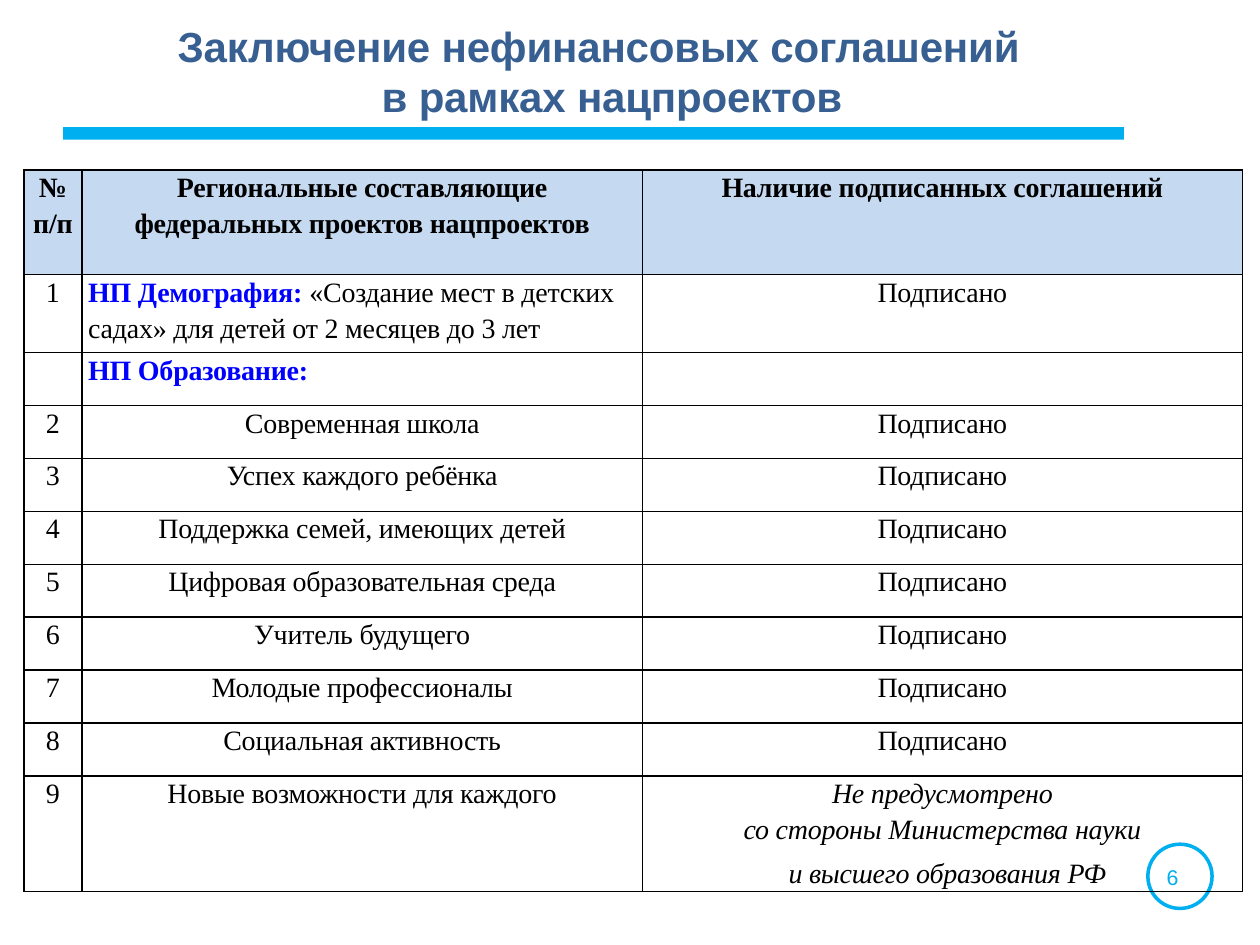
"""Build the slide on signed non-financial agreements of the national projects."""
from lxml import etree
from pptx import Presentation
from pptx.dml.color import RGBColor
from pptx.enum.shapes import MSO_SHAPE as Shape
from pptx.enum.text import PP_ALIGN as Align
from pptx.oxml.ns import qn
from pptx.util import Inches, Pt

COLORS = {"accent": "00AFEF", "title": "375F92", "header": "C5D9F0",
          "project": "0000FF", "text": "000000"}
SERIF, SANS = "Times New Roman", "Arial"
SIGNED = "Подписано"

TITLE = ["Заключение нефинансовых соглашений ", "в рамках нацпроектов"]
HEADERS = [
    [["№"], ["п/п"]],
    [["Региональные составляющие"], ["федеральных проектов нацпроектов"]],
    [["Наличие подписанных соглашений"]],
]
PROJECT = {"color": "project", "bold": True}
DEMOGRAPHY = [
    [("НП Демография: ", PROJECT), "«Создание мест в детских"],
    ["садах» для детей от 2 месяцев до 3 лет"],
]
EDUCATION = [[("НП Образование:", PROJECT)]]
EDUCATION_PROJECTS = [
    "Современная школа", "Успех каждого ребёнка", "Поддержка семей, имеющих детей",
    "Цифровая образовательная среда", "Учитель будущего",
    "Молодые профессионалы", "Социальная активность",
]
LAST_PROJECT = "Новые возможности для каждого"
PAGE_NUMBER = ("6", {"size": 21, "font": SANS, "color": "accent",
                     "italic": False, "spacing": 0, "baseline": -6})
NOT_PLANNED = [["Не предусмотрено"], ["со стороны Министерства науки"]]
NOT_PLANNED_END = ["и высшего образования РФ\t", PAGE_NUMBER]

COLUMN_WIDTHS = [0.46, 4.45, 4.76]
ROW_HEIGHTS = [0.83, 0.62] + [0.42] * 8 + [0.92]


def rgb(name):
    return RGBColor.from_string(COLORS[name])


def write(frame, paragraphs, *, align=Align.CENTER, left=0, hanging=0, tab=None,
          gap=2.9, new=True, **defaults):
    """Write paragraphs, each a list of strings or (string, format) pairs."""
    frame.word_wrap = True
    for index, runs in enumerate(paragraphs):
        first = new and index == 0
        paragraph = frame.paragraphs[0] if first else frame.add_paragraph()
        properties = paragraph._p.get_or_add_pPr()
        properties.set("marL", str(Inches(left)))
        properties.set("indent", str(Inches(-hanging)))
        if tab:
            stops = etree.SubElement(properties, qn("a:tabLst"))
            etree.SubElement(stops, qn("a:tab"), pos=str(Inches(tab)), algn="l")
        paragraph.alignment = align
        if not first:
            paragraph.space_before = Pt(gap)
        for piece in runs:
            words, changes = (piece, {}) if isinstance(piece, str) else piece
            look = {"size": 16, "font": SERIF, "color": "text", "bold": False,
                    "italic": False, "spacing": -0.1, "baseline": 0,
                    **defaults, **changes}
            run = paragraph.add_run()
            run.text = words
            run.font.size, run.font.name = Pt(look["size"]), look["font"]
            run.font.bold, run.font.italic = look["bold"], look["italic"]
            run.font.color.rgb = rgb(look["color"])
            run_properties = run._r.get_or_add_rPr()
            run_properties.set("spc", str(round(look["spacing"] * 100)))
            if look["baseline"]:
                run_properties.set("baseline", str(look["baseline"] * 1000))


def add_decoration(slide, kind, *place, fill=None, line=None):
    shape = slide.shapes.add_shape(kind, *map(Inches, place))
    shape.shadow.inherit = False
    if fill:
        shape.fill.solid()
        shape.fill.fore_color.rgb = rgb(fill)
    else:
        shape.fill.background()
    if line:
        shape.line.color.rgb = rgb(line)
        shape.line.width = Pt(2)
    else:
        shape.line.fill.background()


def style_cell(cell, fill=None):
    cell.margin_left = cell.margin_right = cell.margin_bottom = 0
    cell.margin_top = Inches(0.02)
    properties = cell._tc.get_or_add_tcPr()
    for side in ("lnL", "lnR", "lnT", "lnB"):
        border = etree.SubElement(properties, qn(f"a:{side}"), w=str(Pt(1)))
        solid = etree.SubElement(border, qn("a:solidFill"))
        etree.SubElement(solid, qn("a:srgbClr"), val=COLORS["text"])
    if fill:
        cell.fill.solid()
        cell.fill.fore_color.rgb = rgb(fill)
    else:
        cell.fill.background()


def add_agreements(slide):
    table = slide.shapes.add_table(
        len(ROW_HEIGHTS), len(COLUMN_WIDTHS), Inches(0.19), Inches(1.35),
        Inches(sum(COLUMN_WIDTHS)), Inches(sum(ROW_HEIGHTS))).table
    table.first_row = table.horz_banding = False
    for column, width in zip(table.columns, COLUMN_WIDTHS):
        column.width = Inches(width)
    for row, height in zip(table.rows, ROW_HEIGHTS):
        row.height = Inches(height)

    signed = [[SIGNED]]
    body = [([["1"]], DEMOGRAPHY, signed), ([], EDUCATION, [])]
    body += [([[str(number)]], [[project]], signed)
             for number, project in enumerate(EDUCATION_PROJECTS, 2)]
    body.append(([["9"]], [[LAST_PROJECT]], []))

    for row, contents in enumerate([HEADERS, *body]):
        for column, paragraphs in enumerate(contents):
            cell = table.cell(row, column)
            style_cell(cell, None if row else "header")
            described = paragraphs in (DEMOGRAPHY, EDUCATION)
            write(cell.text_frame, paragraphs, bold=row == 0,
                  align=Align.LEFT if described else Align.CENTER,
                  left=0.05 if described else 0)

    last_frame = table.cell(len(body), 2).text_frame
    write(last_frame, NOT_PLANNED, italic=True)
    write(last_frame, [NOT_PLANNED_END], italic=True, left=0.65, tab=3.76, new=False)


def add_title(slide):
    frame = slide.shapes.add_textbox(
        Inches(1.4), Inches(0.14), Inches(6.76), Inches(0.83)).text_frame
    frame.margin_left = frame.margin_right = frame.margin_bottom = 0
    frame.margin_top = Inches(0.02)
    write(frame, [TITLE], align=Align.LEFT, left=1.63, hanging=1.62,
          size=24, font=SANS, color="title", bold=True)


def main():
    deck = Presentation()
    deck.slide_width, deck.slide_height = Inches(10), Inches(7.5)
    slide = deck.slides.add_slide(deck.slide_layouts[6])
    add_decoration(slide, Shape.RECTANGLE, 0.5, 1.01, 8.42, 0.1, fill="accent")
    add_decoration(slide, Shape.OVAL, 9.11, 6.7, 0.51, 0.51, line="accent")
    add_agreements(slide)
    add_title(slide)
    deck.save("out.pptx")


if __name__ == "__main__":
    main()
